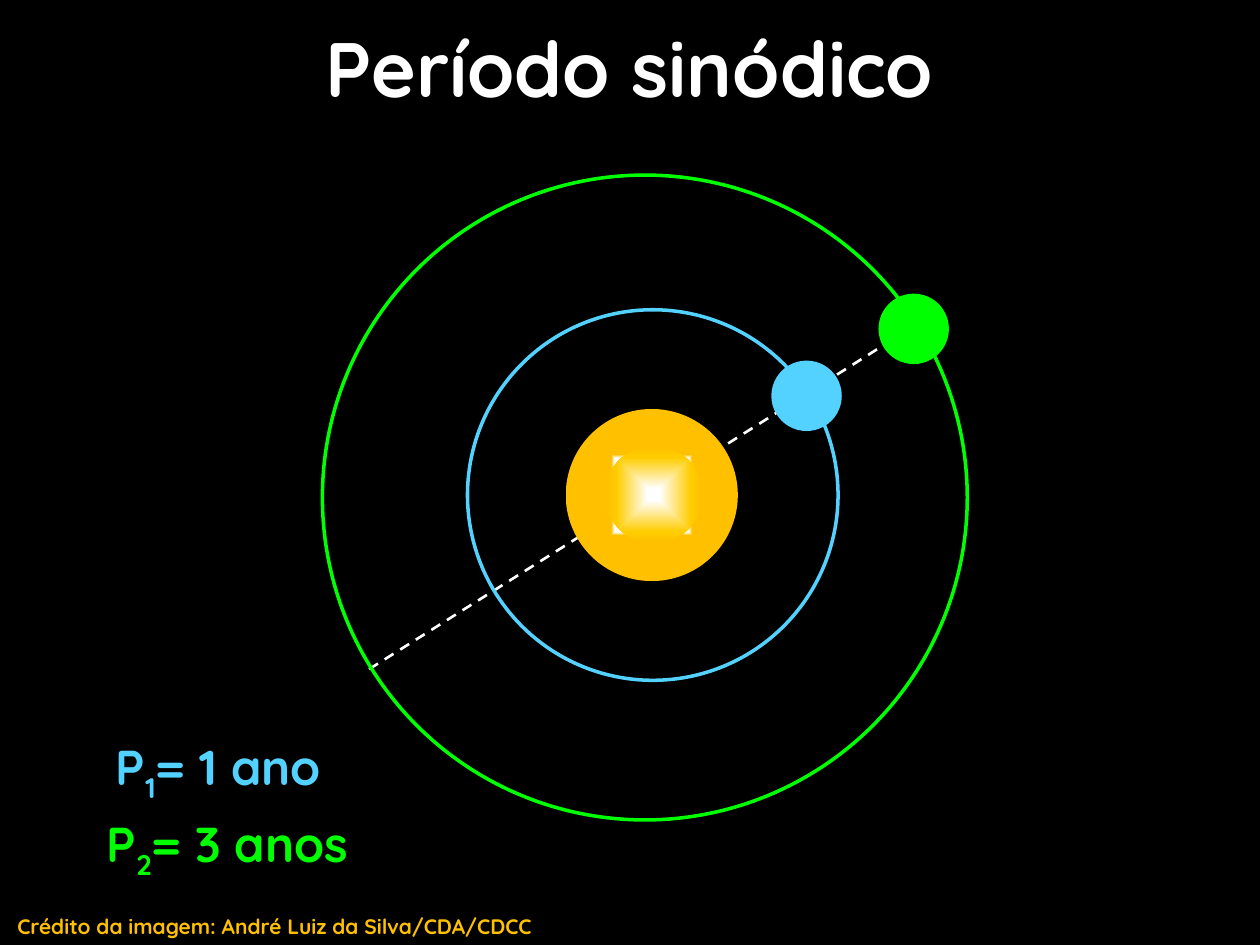
from lxml.etree import SubElement
from pptx import Presentation
from pptx.dml.color import RGBColor
from pptx.enum.dml import MSO_LINE
from pptx.enum.shapes import MSO_CONNECTOR, MSO_SHAPE
from pptx.enum.text import MSO_ANCHOR, PP_ALIGN
from pptx.oxml import parse_xml
from pptx.oxml.ns import nsdecls, qn
from pptx.util import Cm, Pt

FONT = "Quicksand"
BLACK = RGBColor(0x00, 0x00, 0x00)
WHITE = RGBColor(0xFF, 0xFF, 0xFF)
BLUE = RGBColor(0x53, 0xD2, 0xFF)
GREEN = RGBColor(0x00, 0xFF, 0x00)
AMBER = RGBColor(0xFF, 0xC0, 0x00)
YELLOW = RGBColor(0xFF, 0xCC, 0x00)

# Content: lengths in cm, circles as centre x, centre y, diameter
TITLE = "Período sinódico"
CREDIT = "Crédito da imagem: André Luiz da Silva/CDA/CDCC"
PERIODS = [
    (0.71, 14.73, "1", "= 1 ano", BLUE),
    (0.89, 16.28, "2", "= 3 anos", GREEN),
]
ALIGNMENT_LINES = [(7.44, 13.49, 12.85, 10.08), (13.11, 9.93, 18.49, 6.53)]
ORBITS = [(13, 10.03, 13, GREEN), (13.16, 9.98, 7.47, BLUE)]
PLANETS = [(16.26, 7.98, 1.42, BLUE), (18.42, 6.63, 1.42, GREEN)]
SUN_LAYERS = [
    (13.14, 9.98, 3.47, [(43, WHITE), (47, AMBER), (100, AMBER)]),
    (13.18, 9.97, 1.97, [(12, WHITE), (76, YELLOW), (100, AMBER)]),
]

presentation = Presentation()
presentation.slide_width, presentation.slide_height = Cm(25.4), Cm(19.05)
slide = presentation.slides.add_slide(presentation.slide_layouts[5])
slide.background.fill.solid()
slide.background.fill.fore_color.rgb = BLACK


def set_font(paragraph, size, color):
    font = paragraph.font
    font.name, font.size, font.bold = FONT, Pt(size), True
    font.color.rgb = color


def add_text_box(left, top, width, height):
    box = slide.shapes.add_textbox(Cm(left), Cm(top), Cm(width), Cm(height))
    box.text_frame.word_wrap = True
    return box.text_frame.paragraphs[0]


def add_circle(center_x, center_y, diameter):
    shape = slide.shapes.add_shape(
        MSO_SHAPE.OVAL, Cm(center_x - diameter / 2), Cm(center_y - diameter / 2),
        Cm(diameter), Cm(diameter))
    shape.shadow.inherit = False
    shape.fill.background()
    shape.line.fill.background()
    return shape


def fill_radiating(shape, stops):
    stop_xml = "".join(
        f'<a:gs pos="{position * 1000}"><a:srgbClr val="{color}"/></a:gs>'
        for position, color in stops)
    gradient = parse_xml(
        f'<a:gradFill {nsdecls("a")} rotWithShape="1"><a:gsLst>{stop_xml}</a:gsLst>'
        '<a:path path="shape"><a:fillToRect l="50000" t="50000" r="50000" b="50000"/>'
        '</a:path></a:gradFill>')
    properties = shape.element.spPr
    properties.replace(properties.find(qn("a:noFill")), gradient)


# Title
title = slide.shapes.title
title.left, title.top, title.width, title.height = Cm(1.9), Cm(0.13), Cm(21.59), Cm(2.41)
title.text_frame.text = TITLE
title.text_frame.vertical_anchor = MSO_ANCHOR.MIDDLE
title.text_frame.paragraphs[0].alignment = PP_ALIGN.CENTER
set_font(title.text_frame.paragraphs[0], 44, WHITE)

# Orbital periods
for left, top, index, value, color in PERIODS:
    paragraph = add_text_box(left, top, 7.39, 1.45)
    paragraph.alignment = PP_ALIGN.CENTER
    set_font(paragraph, 28, color)
    for text in ("P", index, value):
        run = paragraph.add_run()
        run.text = text
        if text == index:
            run.font._element.set("baseline", "-25000")

# Image credit
paragraph = add_text_box(0.1, 18.29, 13.41, 0.76)
paragraph.text = CREDIT
set_font(paragraph, 12, AMBER)

# Dashed line through the sun and both planets
for ends in ALIGNMENT_LINES:
    connector = slide.shapes.add_connector(MSO_CONNECTOR.STRAIGHT, *map(Cm, ends))
    connector.line.color.rgb = WHITE
    connector.line.width = Pt(1.5)
    connector.line.dash_style = MSO_LINE.DASH
    SubElement(connector.element.spPr, qn("a:effectLst"))

# Orbits, planets and sun
for *circle, color in ORBITS:
    orbit = add_circle(*circle)
    orbit.line.color.rgb = color
    orbit.line.width = Pt(2)
for *circle, color in PLANETS:
    planet = add_circle(*circle)
    planet.fill.solid()
    planet.fill.fore_color.rgb = color
for *circle, stops in SUN_LAYERS:
    fill_radiating(add_circle(*circle), stops)

presentation.save("out.pptx")
